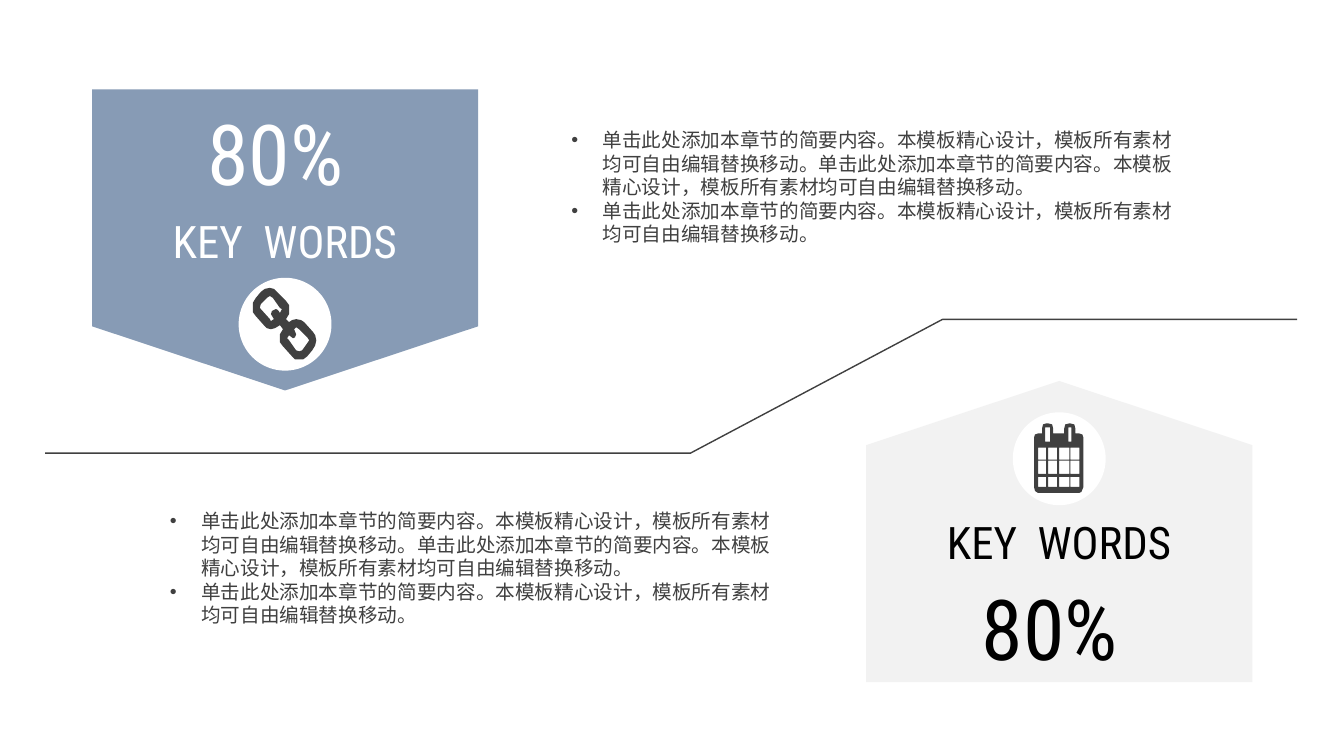
from dataclasses import dataclass
from itertools import product

from lxml import etree
from pptx import Presentation
from pptx.dml.color import RGBColor
from pptx.enum.shapes import MSO_SHAPE
from pptx.enum.text import PP_ALIGN
from pptx.oxml.ns import qn
from pptx.util import Cm, Pt

PENTAGON = MSO_SHAPE.PENTAGON
OVAL = MSO_SHAPE.OVAL
CENTER = PP_ALIGN.CENTER
LEFT = PP_ALIGN.LEFT


@dataclass(frozen=True)
class Theme:
    """Colours, font and type sizes of the slide."""
    blue: RGBColor = RGBColor(0x87, 0x9B, 0xB5)
    pale: RGBColor = RGBColor(0xF2, 0xF2, 0xF2)
    dark: RGBColor = RGBColor(0x40, 0x40, 0x40)
    white: RGBColor = RGBColor(0xFF, 0xFF, 0xFF)
    black: RGBColor = RGBColor(0, 0, 0)
    font: str = "Roboto Condensed"
    figure: Pt = Pt(60)
    keyword: Pt = Pt(32)
    body: Pt = Pt(14)


@dataclass(frozen=True)
class Box:
    """A region of the slide in centimetres."""
    left: float
    top: float
    width: float
    height: float

    def inner(self, top, width, height):
        """Return a horizontally centred box at a distance from the top."""
        return Box(self.left + (self.width - width) / 2, self.top + top, width, height)

    def lengths(self):
        """Return the four measures as lengths."""
        return Cm(self.left), Cm(self.top), Cm(self.width), Cm(self.height)


THEME = Theme()
ICON_UNIT = Cm(0.0254)
DIVIDER_UNIT = Cm(0.01)
CARD_SIZE = (9.73, 7.59)
BULLET_INDENT = Cm(0.79)

SENTENCE = "单击此处添加本章节的简要内容。本模板精心设计，模板所有素材均可自由编辑替换移动。"
BULLETS = (SENTENCE * 2, SENTENCE)

CHAIN_ICON = [
    [(73, 72), (68, 78), (64, 81), (60, 81), (56, 81), (53, 78), (44, 68), (41, 64),
     (41, 60), (41, 56), (44, 51), (41, 47), (36, 50), (32, 51), (28, 50), (25, 47),
     (17, 38), (14, 34), (14, 30), (14, 25), (17, 20), (22, 14), (26, 11), (31, 10),
     (35, 11), (38, 14), (47, 23), (50, 27), (50, 31), (50, 36), (47, 41), (50, 44),
     (53, 42), (57, 41), (62, 42), (65, 44), (74, 54), (76, 57), (77, 62), (76, 67)],
    [(41, 30), (34, 20), (31, 18), (28, 20), (22, 26), (21, 30), (22, 31), (31, 41),
     (32, 43), (35, 41), (32, 36), (33, 33), (37, 31), (39, 32), (41, 35), (43, 31)],
    [(68, 59), (60, 51), (57, 49), (55, 51), (57, 56), (56, 59), (54, 60), (50, 57),
     (48, 60), (50, 62), (57, 72), (60, 73), (63, 72), (68, 65), (70, 62)],
]
CALENDAR_OUTLINE = [
    (70, 74), (68, 79), (66, 80), (25, 80), (22, 78), (21, 74), (21, 25), (22, 22),
    (25, 21), (29, 21), (29, 16), (30, 12), (33, 11), (35, 11), (39, 12), (40, 16),
    (40, 21), (51, 21), (51, 16), (52, 12), (56, 11), (57, 11), (61, 12), (62, 16),
    (62, 21), (66, 21), (69, 22), (70, 25)]
DAY_COLUMNS = [(25, 33), (35, 44), (46, 56), (57, 66)]
WEEK_ROWS = [(35, 47), (48, 61), (64, 74)]
RING_COLUMNS = [(32, 37), (55, 58)]
RING_ROWS = [(15, 29)]
DIVIDER = [(114, 1142), (1740, 1142), (2375, 805), (3269, 805)]


def calendar_icon():
    """Return the calendar outline with its day and ring openings."""
    openings = [*product(DAY_COLUMNS, WEEK_ROWS), *product(RING_COLUMNS, RING_ROWS)]
    return [CALENDAR_OUTLINE] + [
        [(left, top), (left, bottom), (right, bottom), (right, top)]
        for (left, right), (top, bottom) in openings]


def paint(shape, colour):
    """Give a shape a plain fill without line or shadow."""
    shape.shadow.inherit = False
    shape.fill.solid()
    shape.fill.fore_color.rgb = colour
    shape.line.fill.background()


def add_outline(page, contours, unit, origin=(0, 0), close=True):
    """Build one freeform from a list of contours."""
    builder = page.shapes.build_freeform(*contours[0][0], scale=unit)
    for index, contour in enumerate(contours):
        if index:
            builder.move_to(*contour[0])
        builder.add_line_segments(contour[1:], close=close)
    return builder.convert_to_shape(*origin)


def add_text(page, box, lines, size, colour, align):
    """Add a wrapped text box and return its paragraphs."""
    frame = page.shapes.add_textbox(*box.lengths()).text_frame
    frame.word_wrap = True
    frame.text = "\n".join(lines)
    for para in frame.paragraphs:
        para.alignment = align
        for run in para.runs:
            run.font.name = THEME.font
            run.font.size = size
            run.font.color.rgb = colour
    return frame.paragraphs


def add_card(page, box, rotation, fill, colour, tops, icon):
    """Place a pointed card with its figure, keyword and round icon."""
    middle = box.top + box.height / 2
    body = Box(box.left + (box.width - box.height) / 2, middle - box.width / 2,
               box.height, box.width)
    card = page.shapes.add_shape(PENTAGON, *body.lengths())
    card.adjustments[0] = 0.213
    card.rotation = rotation
    paint(card, fill)

    figure_top, keyword_top, disc_top = tops
    add_text(page, box.inner(figure_top, 7.24, 2.82), ["80% "],
             THEME.figure, colour, CENTER)
    add_text(page, box.inner(keyword_top, 7.24, 1.63), ["KEY  WORDS"],
             THEME.keyword, colour, CENTER)

    disc = page.shapes.add_shape(OVAL, *box.inner(disc_top, 2.34, 2.34).lengths())
    paint(disc, THEME.white)
    paint(add_outline(page, icon, ICON_UNIT, (disc.left, disc.top)), THEME.dark)


def add_bullets(page, box):
    """Place the bulleted description."""
    for para in add_text(page, box, BULLETS, THEME.body, THEME.dark, LEFT):
        properties = para._p.get_or_add_pPr()
        properties.set("marL", str(BULLET_INDENT))
        properties.set("indent", str(-BULLET_INDENT))
        etree.SubElement(properties, qn("a:buFont")).set("typeface", "Arial")
        etree.SubElement(properties, qn("a:buChar")).set("char", "•")


def add_divider(page):
    """Draw the stepped line between the two halves."""
    line = add_outline(page, [DIVIDER], DIVIDER_UNIT, close=False)
    line.shadow.inherit = False
    line.fill.background()
    line.line.color.rgb = THEME.dark
    line.line.width = Pt(1)


def main():
    """Build and save the slide."""
    deck = Presentation()
    deck.slide_width, deck.slide_height = Cm(33.87), Cm(19.05)
    page = deck.slides.add_slide(deck.slide_layouts[6])
    add_divider(page)
    add_card(page, Box(2.32, 2.25, *CARD_SIZE), 90, THEME.blue, THEME.white,
             (0.18, 3.0, 4.75), CHAIN_ICON)
    add_card(page, Box(21.83, 9.6, *CARD_SIZE), 270, THEME.pale, THEME.black,
             (4.8, 3.25, 0.79), calendar_icon())
    add_bullets(page, Box(14.15, 3.1, 15.9, 3.9))
    add_bullets(page, Box(4.03, 12.7, 15.9, 3.9))
    deck.save("out.pptx")


if __name__ == "__main__":
    main()
